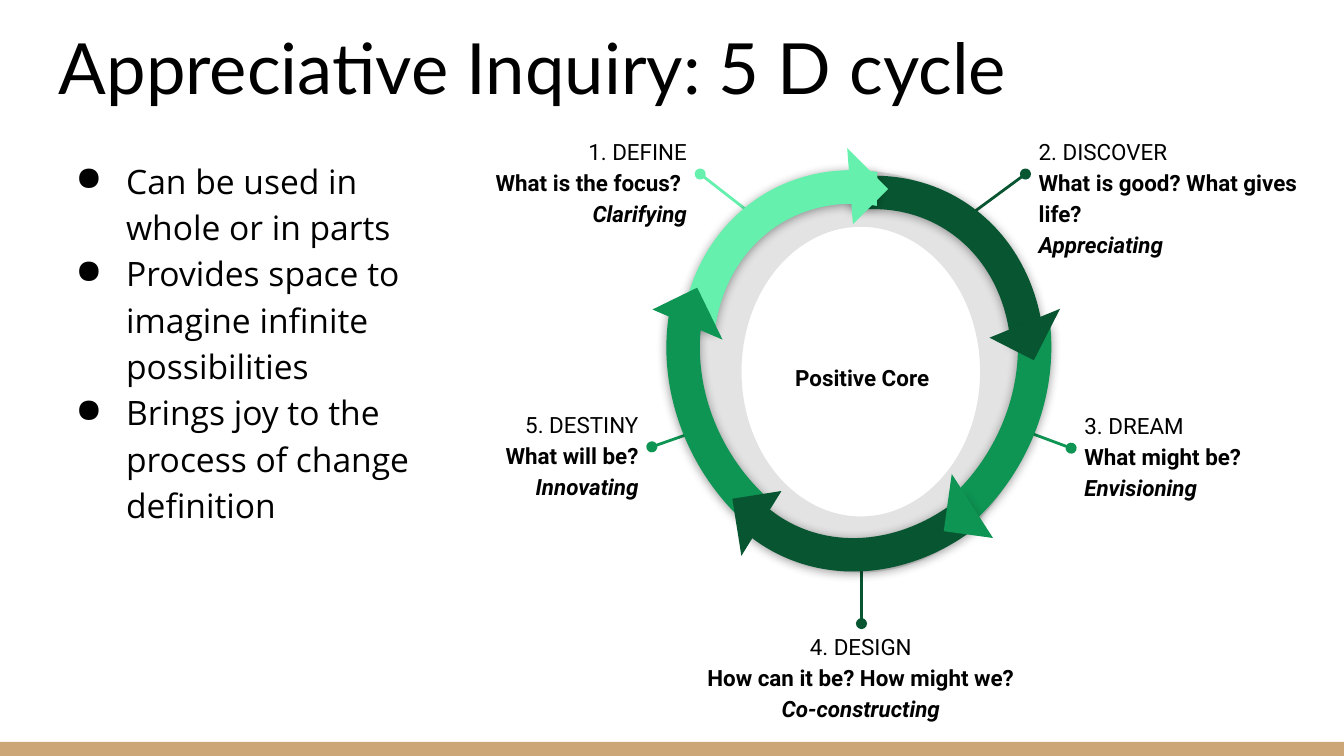
from dataclasses import dataclass

import pptx
import pptx.dml.color
import pptx.enum.shapes
import pptx.enum.text
import pptx.oxml
import pptx.oxml.ns
import pptx.util

RGBColor = pptx.dml.color.RGBColor
Shape = pptx.enum.shapes.MSO_SHAPE
Align = pptx.enum.text.PP_ALIGN
Anchor = pptx.enum.text.MSO_ANCHOR

BLACK = RGBColor(0x00, 0x00, 0x00)
CORE_BLACK = RGBColor(0x02, 0x02, 0x02)
TAN = RGBColor(0xCC, 0xA6, 0x77)
DARK = RGBColor(0x08, 0x56, 0x31)
MEDIUM = RGBColor(0x0E, 0x94, 0x53)
LIGHT = RGBColor(0x65, 0xF0, 0xAD)

SLIDE_WIDTH = pptx.util.Inches(10)
SLIDE_HEIGHT = pptx.util.Inches(5.625)
CELL = SLIDE_WIDTH / 100  # square grid: 100 columns, 56.25 rows
LABEL_ROWS = 7.9
LABEL_SPACING = 1.15
TOP, LEFT, RIGHT = 0, 1, 3  # connection sites of a rectangle


@dataclass(frozen=True)
class Area:
    column: float
    row: float
    columns: float
    rows: float


@dataclass(frozen=True)
class Stage:
    lines: tuple[str, str, str]
    area: Area
    align: Align
    color: RGBColor
    pointer: tuple[float, float, float, float]
    joined_side: int | None = None


@dataclass(frozen=True)
class Arc:
    """One ring segment; start and end are angles in degrees."""
    area: Area
    rotation: float
    start: float
    end: float
    thickness: float
    color: RGBColor
    flipped: bool = False


@dataclass(frozen=True)
class Tip:
    area: Area
    rotation: float
    color: RGBColor


BULLETS = (
    "Can be used in whole or in parts",
    "Provides space to imagine infinite possibilities",
    "Brings joy to the process of change definition",
)
STAGES = (
    Stage(("2. DISCOVER", "What is good? What gives life?", "Appreciating"),
          Area(76.3, 9, 23.7, LABEL_ROWS), Align.LEFT, DARK, (76.3, 13, 70.8, 17), LEFT),
    Stage(("1. DEFINE", "What is the focus? ", "Clarifying"),
          Area(35.5, 9, 16.6, LABEL_ROWS), Align.RIGHT, LIGHT, (52.2, 13, 57.3, 17), RIGHT),
    Stage(("3. DREAM", "What might be?", "Envisioning"),
          Area(79.7, 29.4, 15.4, LABEL_ROWS), Align.LEFT, MEDIUM, (79.6, 33.4, 75, 31.6), LEFT),
    Stage(("5. DESTINY", "What will be?", "Innovating"),
          Area(33.1, 29.3, 15.4, LABEL_ROWS), Align.RIGHT, MEDIUM, (48.6, 33.3, 53.2, 31.6), RIGHT),
    Stage(("4. DESIGN", "How can it be? How might we?", "Co-constructing"),
          Area(51, 45.8, 26.1, LABEL_ROWS), Align.CENTER, DARK, (64.1, 46.4, 64.1, 40.7)),
)
ARCS = (
    Arc(Area(49.5, 12.6, 27.7, 31.7), 30, 240.24, 316.64, 0.09, DARK),
    Arc(Area(50, 11.8, 27.7, 31.7), 210, 336.31, 43.73, 0.09, MEDIUM, True),
    Arc(Area(51.1, 12.2, 27.8, 31.7), 330, 238.9, 314.25, 0.09, LIGHT, True),
    Arc(Area(50.1, 11.8, 27.7, 31.7), 150, 336.41, 50.12, 0.09, MEDIUM),
    Arc(Area(51.3, 11.3, 27.7, 31.7), 210, 262.31, 333.47, 0.09, DARK, True),
)
TIPS = (
    Tip(Area(74.1, 22.2, 4.3, 3.7), 297, DARK),
    Tip(Area(49.3, 22, 3.7, 4.3), 154, MEDIUM),
    Tip(Area(70.5, 35.5, 3.7, 4.3), 7.9, MEDIUM),
    Tip(Area(54.5, 37.1, 4.3, 3.7), 81, DARK),
    Tip(Area(61.1, 12, 4.3, 3.7), 225, LIGHT),
)


def grid(count: float) -> pptx.util.Emu:
    return pptx.util.Emu(round(count * CELL))


def frame(area: Area) -> tuple:
    return grid(area.column), grid(area.row), grid(area.columns), grid(area.rows)


def append_xml(parent, tag: str, content: str = "", **attributes: str) -> None:
    """Append one DrawingML element, with its inner XML, to parent."""
    listed = "".join(f' {name}="{value}"' for name, value in attributes.items())
    namespace = pptx.oxml.ns.nsdecls("a")
    parent.append(pptx.oxml.parse_xml(f"<a:{tag} {namespace}{listed}>{content}</a:{tag}>"))


def add_filled(page, kind: Shape, area: Area, color: RGBColor, rotation: float = 0):
    shape = page.shapes.add_shape(kind, *frame(area))
    shape.shadow.inherit = False
    shape.fill.solid()
    shape.fill.fore_color.rgb = color
    shape.line.fill.background()
    shape.rotation = rotation
    return shape


def add_box(page, area: Area, anchor: Anchor = Anchor.TOP):
    box = page.shapes.add_textbox(*frame(area))
    text = box.text_frame
    text.word_wrap = True
    text.vertical_anchor = anchor
    text.margin_left = text.margin_right = text.margin_top = text.margin_bottom = grid(1)
    return box


def add_paragraph(box, index: int, wording: str, font: str, size: float,
                  align: Align = Align.LEFT, spacing: float = 1.0,
                  bold: bool = False, italic: bool = False, color: RGBColor = BLACK):
    text = box.text_frame
    para = text.paragraphs[0] if index == 0 else text.add_paragraph()
    para.alignment = align
    para.line_spacing = spacing
    span = para.add_run()
    span.text = wording
    span.font.name = font
    span.font.size = pptx.util.Pt(size)
    span.font.bold = bold
    span.font.italic = italic
    span.font.color.rgb = color
    return para


def add_bullets(page) -> None:
    box = add_box(page, Area(3.4, 10.5, 28.5, 41.1))
    for index, wording in enumerate(BULLETS):
        para = add_paragraph(box, index, wording, "Open Sans", 18, spacing=LABEL_SPACING)
        properties = para._p.get_or_add_pPr()
        properties.set("marL", str(grid(5)))
        properties.set("indent", str(-grid(3.75)))
        append_xml(properties, "buChar", char="●")


def add_stage(page, stage: Stage) -> None:
    begin_x, begin_y, end_x, end_y = map(grid, stage.pointer)
    pointer = page.shapes.add_connector(
        pptx.enum.shapes.MSO_CONNECTOR.STRAIGHT, begin_x, begin_y, end_x, end_y)
    pointer.line.color.rgb = stage.color
    pointer.line.width = pptx.util.Pt(1.5)
    append_xml(pointer.line._get_or_add_ln(), "headEnd", type="oval")
    append_xml(pointer._element.spPr, "effectLst")

    box = add_box(page, stage.area)
    for index, wording in enumerate(stage.lines):
        add_paragraph(box, index, wording, "Roboto", 12, stage.align, LABEL_SPACING,
                      bold=index > 0, italic=index == 2)
    if stage.joined_side is not None:
        pointer.begin_connect(box, stage.joined_side)


def add_arc(page, arc: Arc) -> None:
    shape = add_filled(page, Shape.BLOCK_ARC, arc.area, arc.color, arc.rotation)
    # Angles are stored in 60000ths of a degree, adjustments in 100000ths.
    for index, value in enumerate((arc.start * 0.6, arc.end * 0.6, arc.thickness)):
        shape.adjustments[index] = value
    properties = shape._element.spPr
    if arc.flipped:
        properties.find(pptx.oxml.ns.qn("a:xfrm")).set("flipH", "1")
    effects = properties.find(pptx.oxml.ns.qn("a:effectLst"))
    append_xml(effects, "outerShdw",
               '<a:srgbClr val="000000"><a:alpha val="40000"/></a:srgbClr>',
               blurRad=str(pptx.util.Pt(5.6)), dist=str(pptx.util.Pt(0.8)),
               dir="5400000", rotWithShape="0")


def add_core_ring(page) -> None:
    ring = add_filled(page, Shape.DONUT, Area(51, 12.7, 26.1, 29.9), BLACK)
    ring.adjustments[0] = 0.16
    color = ring._element.spPr.find(pptx.oxml.ns.qn("a:solidFill"))[0]
    append_xml(color, "alpha", val="11000")


def main() -> None:
    deck = pptx.Presentation()
    deck.slide_width, deck.slide_height = SLIDE_WIDTH, SLIDE_HEIGHT
    page = deck.slides.add_slide(deck.slide_layouts[6])

    add_filled(page, Shape.RECTANGLE, Area(0, 55.2, 100, 1.05), TAN)
    title = add_box(page, Area(3.4, 2.8, 93.2, 6.3), Anchor.BOTTOM)
    add_paragraph(title, 0, "Appreciative Inquiry: 5 D cycle", "Lato", 37.8)
    add_bullets(page)
    add_core_ring(page)
    for stage in STAGES:
        add_stage(page, stage)
    for arc in ARCS:
        add_arc(page, arc)
    core = add_box(page, Area(56.7, 23.2, 14.9, 9.5), Anchor.MIDDLE)
    add_paragraph(core, 0, "Positive Core", "Roboto", 12, Align.CENTER, LABEL_SPACING,
                  bold=True, color=CORE_BLACK)
    for tip in TIPS:
        add_filled(page, Shape.RIGHT_TRIANGLE, tip.area, tip.color, tip.rotation)

    deck.save("out.pptx")


if __name__ == "__main__":
    main()
